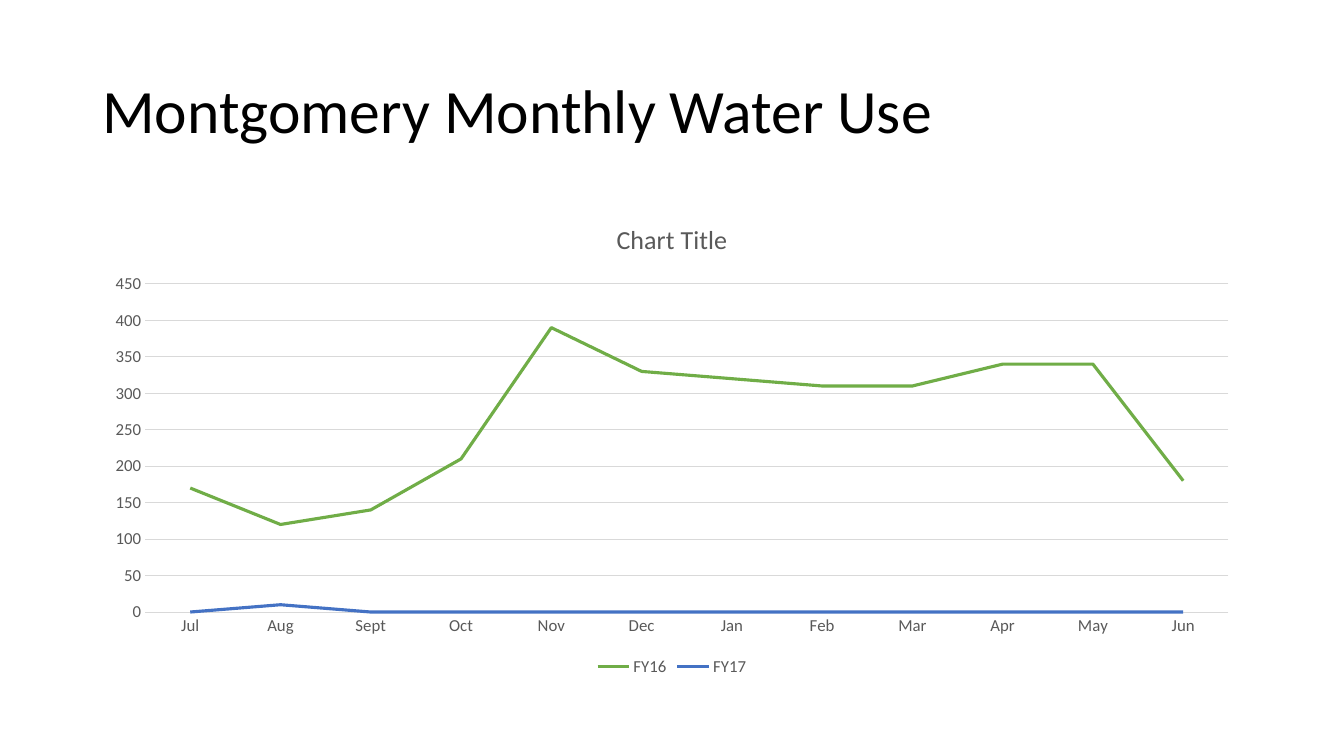
from pptx import Presentation
from pptx import util as u
from pptx.chart import data
from pptx.dml.color import RGBColor
from pptx.enum import chart as ch, text

BLACK = RGBColor(0x00, 0x00, 0x00)
GRAY = RGBColor(0x59, 0x59, 0x59)
LIGHT = RGBColor(0xD9, 0xD9, 0xD9)
GREEN = RGBColor(0x70, 0xAD, 0x47)
BLUE = RGBColor(0x44, 0x72, 0xC4)

MONTHS = ["Jul", "Aug", "Sept", "Oct", "Nov", "Dec",
          "Jan", "Feb", "Mar", "Apr", "May", "Jun"]
WATER_USE = {
    "FY16": (GREEN, [170, 120, 140, 210, 390, 330, 320, 310, 310, 340, 340, 180]),
    "FY17": (BLUE, [0, 10, 0, 0, 0, 0, 0, 0, 0, 0, 0, 0]),
}


def set_font(font, name="Calibri", size=12, color=GRAY):
    font.name = name
    font.size = u.Pt(size)
    font.bold = False
    font.color.rgb = color


def write(frame, words, spacing=None, **font_format):
    paragraph = frame.paragraphs[0]
    paragraph.line_spacing = spacing
    run = paragraph.add_run()
    run.text = words
    set_font(run.font, **font_format)


def draw_line(line, color, width):
    line.color.rgb = color
    line.width = u.Pt(width)


class WaterSlide:
    left, width = 66, 828
    thin, thick = 0.75, 2.25

    def __init__(self, deck):
        self.slide = deck.slides.add_slide(deck.slide_layouts[6])

    def heading(self, words, top, height):
        box = self.slide.shapes.add_textbox(
            u.Pt(self.left), u.Pt(top), u.Pt(self.width), u.Pt(height))
        frame = box.text_frame
        frame.word_wrap = True
        frame.vertical_anchor = text.MSO_ANCHOR.MIDDLE
        write(frame, words, spacing=0.9, size=44, color=BLACK)

    def line_chart(self, caption, months, water_use, top, height):
        usage = data.CategoryChartData()
        usage.categories = months
        for year, (_, amounts) in water_use.items():
            usage.add_series(year, amounts)
        chart = self.slide.shapes.add_chart(
            ch.XL_CHART_TYPE.LINE, u.Pt(self.left), u.Pt(top),
            u.Pt(self.width), u.Pt(height), usage).chart
        set_font(chart.font)
        chart.has_title = True
        write(chart.chart_title.text_frame, caption, size=18.6)
        chart.chart_title.include_in_layout = False
        chart.has_legend = True
        chart.legend.position = ch.XL_LEGEND_POSITION.BOTTOM
        chart.legend.include_in_layout = False
        set_font(chart.legend.font)

        plot = chart.plots[0]
        plot.vary_by_categories = False
        for series in plot.series:
            series.smooth = False
            series.marker.style = ch.XL_MARKER_STYLE.NONE
            draw_line(series.format.line, water_use[series.name][0], self.thick)
        self.axes(chart)

    def axes(self, chart):
        month_axis, amount_axis = chart.category_axis, chart.value_axis
        for axis in (month_axis, amount_axis):
            axis.major_tick_mark = axis.minor_tick_mark = ch.XL_TICK_MARK.NONE
            set_font(axis.tick_labels.font)
        draw_line(month_axis.format.line, LIGHT, self.thin)
        amount_axis.minimum_scale = 0
        amount_axis.maximum_scale = 450
        amount_axis.major_unit = 50
        amount_axis.format.line.fill.background()
        draw_line(amount_axis.major_gridlines.format.line, LIGHT, self.thin)


def main():
    deck = Presentation()
    deck.slide_width, deck.slide_height = u.Pt(960), u.Pt(540)
    water = WaterSlide(deck)
    water.heading("Montgomery Monthly Water Use", top=28.75, height=104.4)
    water.line_chart("Chart Title", MONTHS, WATER_USE, top=143.75, height=342.6)
    deck.save("out.pptx")


if __name__ == "__main__":
    main()
